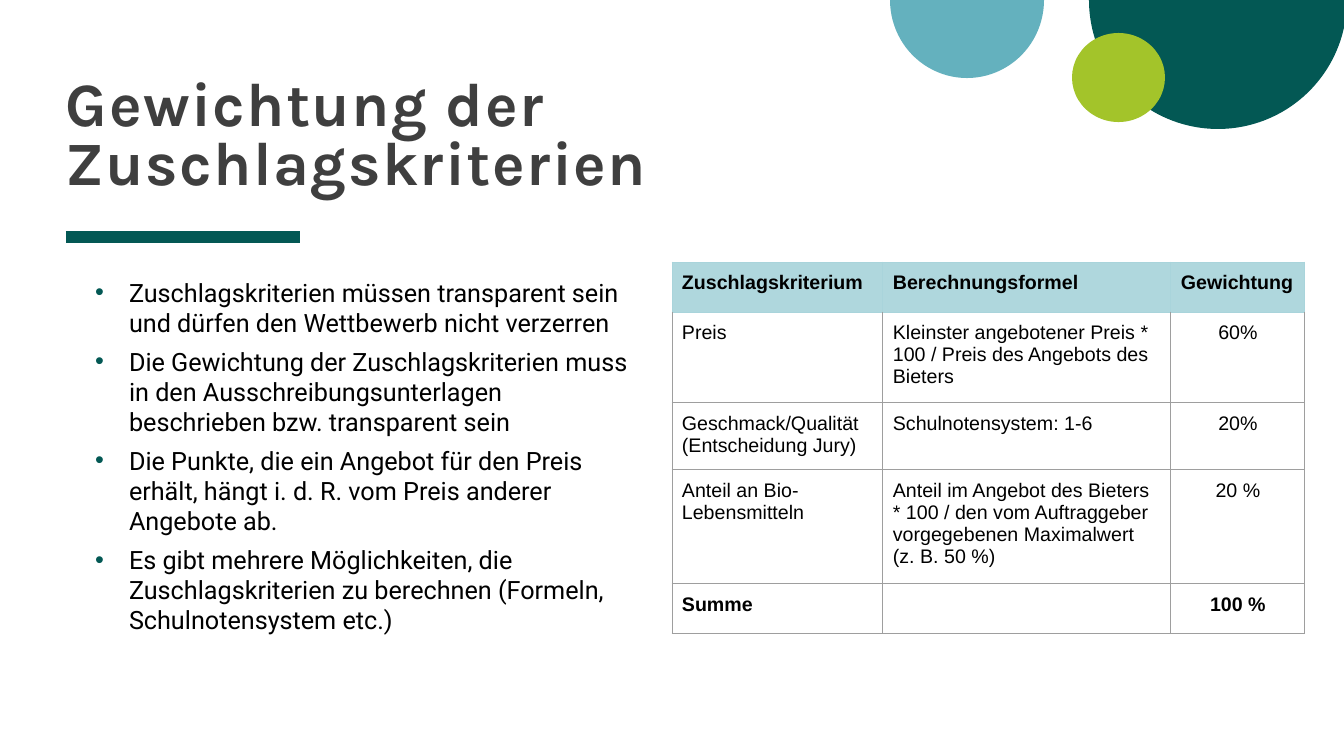
from lxml import etree
from pptx import Presentation
from pptx import util as u
from pptx.dml import color as dml
from pptx.enum import shapes, text
from pptx.oxml import ns

PX = 9144000 / 1008
TEAL, BLUE, LIME = "035854", "64B1BE", "A3C42A"
HEAD, EDGE, GRID = "AFD7DD", "A9D4DB", "9E9E9E"
POINTS = [
    "Zuschlagskriterien müssen transparent sein und dürfen den Wettbewerb nicht verzerren",
    "Die Gewichtung der Zuschlagskriterien muss in den Ausschreibungsunterlagen "
    "beschrieben bzw. transparent sein",
    "Die Punkte, die ein Angebot für den Preis erhält, hängt i. d. R. vom Preis "
    "anderer Angebote ab.",
    "Es gibt mehrere Möglichkeiten, die Zuschlagskriterien zu berechnen "
    "(Formeln, Schulnotensystem etc.)",
]
ROWS = [
    ("Zuschlagskriterium", "Berechnungsformel", "Gewichtung"),
    ("Preis", "Kleinster angebotener Preis * 100 / Preis des Angebots des Bieters", "60%"),
    ("Geschmack/Qualität (Entscheidung Jury)", "Schulnotensystem: 1-6", "20%"),
    ("Anteil an Bio-Lebensmitteln",
     "Anteil im Angebot des Bieters * 100 / den vom Auftraggeber vorgegebenen "
     "Maximalwert \v(z. B. 50 %)", "20 %"),
    ("Summe", "", "100 %"),
]
WIDTHS, HEIGHTS = (211, 288, 134), (50, 86, 65, 108, 50)


def px(n):
    """Turn pixels into EMU."""
    return u.Emu(round(n * PX))


def rgb(code):
    """Turn a hex string into a colour."""
    return dml.RGBColor.from_string(code)


def sub(node, tag, **keys):
    """Append a drawing element with attributes."""
    return etree.SubElement(node, ns.qn("a:" + tag), **keys)


def write(para, words, size=14, face="Arial", tint="000000", bold=False,
          align=None, track=0):
    """Fill a paragraph with formatted text."""
    para.text = words
    para.alignment = align
    for run in para.runs:
        font = run.font
        font.size, font.name, font.bold = u.Pt(size), face, bold
        font.color.rgb = rgb(tint)
        if track:
            run._r.get_or_add_rPr().set("spc", str(track))


def frame(slide, box, top=0, anchor=text.MSO_ANCHOR.TOP):
    """Add a wrapping text box and return its frame."""
    body = slide.shapes.add_textbox(*map(px, box)).text_frame
    body.word_wrap = True
    body.vertical_anchor = anchor
    body.margin_left = body.margin_right = body.margin_bottom = 0
    body.margin_top = px(top)
    return body


def disc(slide, box, tint, half=False):
    """Add a full disc or the lower half of one."""
    kind = shapes.MSO_SHAPE.PIE if half else shapes.MSO_SHAPE.OVAL
    shape = slide.shapes.add_shape(kind, *map(px, box))
    if half:
        shape.adjustments[0] = 0
        shape.adjustments[1] = 108
    shape.shadow.inherit = False
    shape.fill.solid()
    shape.fill.fore_color.rgb = rgb(tint)
    shape.line.fill.background()


def decor(slide, box):
    """Place the discs in the top right corner."""
    left, top = box[:2]
    disc(slide, (left + 199, top - 129, 258, 258), TEAL, True)
    disc(slide, (left, top - 78, 154, 156), BLUE, True)
    disc(slide, (left + 182, top + 33, 93, 89), LIME)


def title(slide, box):
    """Place the heading and the rule below it."""
    left, top, wide, high = box
    para = frame(slide, box, anchor=text.MSO_ANCHOR.BOTTOM).paragraphs[0]
    para.line_spacing = 0.8
    write(para, "Gewichtung der Zuschlagskriterien", size=44, face="Karla",
          tint="3F3F3F", bold=True, track=100)
    level = top + high + 40
    rule = slide.shapes.add_connector(
        shapes.MSO_CONNECTOR.STRAIGHT, px(left), px(level), px(left + 234), px(level))
    rule.line.width = u.Pt(8)
    rule.line.color.rgb = rgb(TEAL)
    sub(rule._element.spPr, "effectLst")


def bullets(slide, box):
    """Place the bullet list."""
    body = frame(slide, box, top=25)
    for n, words in enumerate(POINTS):
        para = body.add_paragraph() if n else body.paragraphs[0]
        if n:
            para.space_before = u.Pt(6)
        props = para._p.get_or_add_pPr()
        props.set("marL", str(px(63)))
        props.set("indent", str(px(-34)))
        sub(sub(props, "buClr"), "srgbClr", val=TEAL)
        sub(props, "buFont", typeface="Arial")
        sub(props, "buChar", char="•")
        write(para, words, size=18, face="Roboto")


def border(cell, row):
    """Draw the four edges of a cell."""
    props = cell._tc.get_or_add_tcPr()
    for n, side in enumerate(("lnL", "lnR", "lnT", "lnB")):
        pale = row == 0 or (row == 1 and side == "lnT")
        line = etree.Element(ns.qn("a:" + side), w=str(u.Pt(0.75)))
        sub(sub(line, "solidFill"), "srgbClr", val=EDGE if pale else GRID)
        props.insert(n, line)


def matrix(slide, box):
    """Place the table of criteria."""
    grid = slide.shapes.add_table(len(ROWS), len(WIDTHS), *map(px, box)).table
    grid.first_row = grid.horz_banding = False
    for col, wide in zip(grid.columns, WIDTHS):
        col.width = px(wide)
    for r, (words, high) in enumerate(zip(ROWS, HEIGHTS)):
        grid.rows[r].height = px(high)
        for c, word in enumerate(words):
            cell = grid.cell(r, c)
            cell.margin_left = cell.margin_right = px(10)
            cell.margin_top = cell.margin_bottom = px(10)
            if r:
                cell.fill.background()
            else:
                cell.fill.solid()
                cell.fill.fore_color.rgb = rgb(HEAD)
            border(cell, r)
            mid = text.PP_ALIGN.CENTER if r and c == 2 else None
            write(cell.text_frame.paragraphs[0], word,
                  bold=r in (0, len(ROWS) - 1), align=mid)


def main():
    """Build and save the slide."""
    deck = Presentation()
    deck.slide_width, deck.slide_height = px(1344), px(756)
    slide = deck.slides.add_slide(deck.slide_layouts[6])
    decor(slide, (890, 0, 454, 129))
    title(slide, (66, 21, 748, 176))
    bullets(slide, (66, 252, 578, 473))
    matrix(slide, (672, 262, sum(WIDTHS), sum(HEIGHTS)))
    deck.save("out.pptx")


if __name__ == "__main__":
    main()
